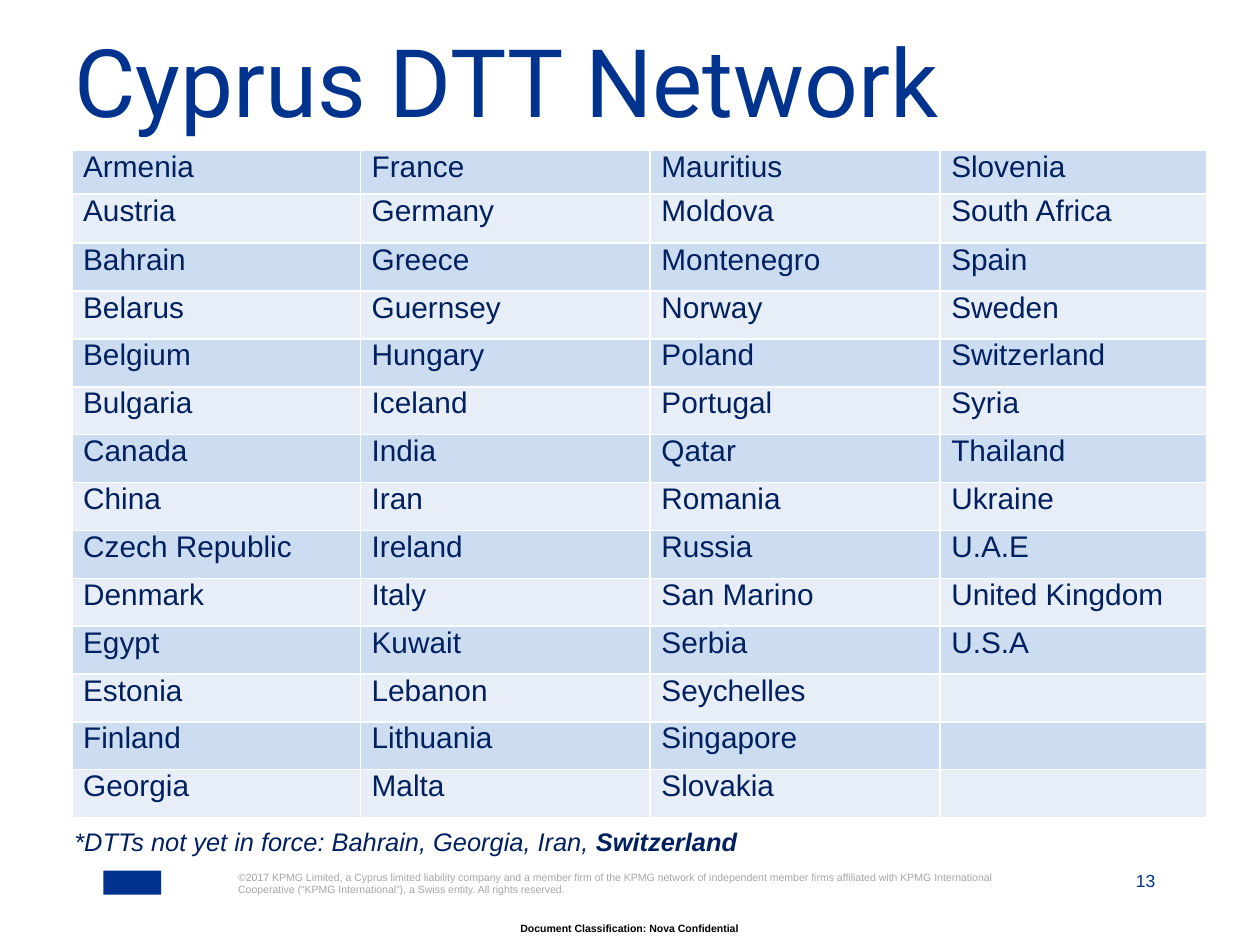
from lxml.etree import SubElement
from pptx import Presentation
from pptx.dml.color import RGBColor
from pptx.enum.shapes import MSO_SHAPE
from pptx.enum.text import MSO_ANCHOR, MSO_AUTO_SIZE, PP_ALIGN
from pptx.oxml.ns import qn
from pptx.util import Inches, Pt

COLORS = {
    "brand": "00338D",
    "navy": "002060",
    "gray": "A6A6A6",
    "black": "000000",
    "border": "FFFFFF",
    "dark_band": "CCDCF1",
    "light_band": "E7EEF8",
}

COUNTRY_COLUMNS = [
    ["Armenia", "Austria", "Bahrain", "Belarus", "Belgium", "Bulgaria", "Canada",
     "China", "Czech Republic", "Denmark", "Egypt", "Estonia", "Finland", "Georgia"],
    ["France", "Germany", "Greece", "Guernsey", "Hungary", "Iceland", "India",
     "Iran", "Ireland", "Italy", "Kuwait", "Lebanon", "Lithuania", "Malta"],
    ["Mauritius", "Moldova", "Montenegro", "Norway", "Poland", "Portugal", "Qatar",
     "Romania", "Russia", "San Marino", "Serbia", "Seychelles", "Singapore", "Slovakia"],
    ["Slovenia", "South Africa", "Spain", "Sweden", "Switzerland", "Syria", "Thailand",
     "Ukraine", "U.A.E", "United Kingdom", "U.S.A", "", "", ""],
]
COLUMN_WIDTHS = [2.29, 2.3, 2.3, 2.12]
ROW_HEIGHTS = [0.35, 0.39] + [0.38] * 12

COPYRIGHT = (
    "©2017 KPMG Limited, a Cyprus limited liability company and a member firm of the "
    "KPMG network of independent member firms affiliated with KPMG International "
    "Cooperative (“KPMG International”), a Swiss entity. All rights reserved."
)


def color(name):
    """Return the named palette colour."""
    return RGBColor.from_string(COLORS[name])


def style_font(font, size, color_name, family="Arial"):
    """Set the family, size and colour of a font."""
    font.name = family
    font.size = Pt(size)
    font.color.rgb = color(color_name)


def prepare_frame(frame, anchor=MSO_ANCHOR.TOP):
    """Give a text frame wrapping, no margins and a fixed size."""
    frame.word_wrap = True
    frame.auto_size = MSO_AUTO_SIZE.NONE
    frame.vertical_anchor = anchor
    frame.margin_left = frame.margin_right = frame.margin_top = frame.margin_bottom = 0


def add_text(page, box, text, size, color_name, align=PP_ALIGN.LEFT, anchor=MSO_ANCHOR.TOP):
    """Add a one-paragraph text box and return the paragraph."""
    frame = page.shapes.add_textbox(*map(Inches, box)).text_frame
    prepare_frame(frame, anchor)
    para = frame.paragraphs[0]
    para.text = text
    para.alignment = align
    style_font(para.font, size, color_name)
    return para


def place_title(page, box):
    """Fill and format the title placeholder."""
    title = page.shapes.title
    title.left, title.top, title.width, title.height = map(Inches, box)
    prepare_frame(title.text_frame)
    title.text_frame.margin_left = Inches(0.03)
    para = title.text_frame.paragraphs[0]
    para.text = "Cyprus DTT Network"
    para.alignment = PP_ALIGN.LEFT
    para.line_spacing = Pt(61.5)
    style_font(para.font, 54, "brand", "Roboto")


def add_borders(cell):
    """Draw a thin line on all four sides of a cell."""
    properties = cell._tc.get_or_add_tcPr()
    for side in ("lnL", "lnR", "lnT", "lnB"):
        line = SubElement(properties, qn(f"a:{side}"), w=str(Pt(1)))
        fill = SubElement(line, qn("a:solidFill"))
        SubElement(fill, qn("a:srgbClr"), val=COLORS["border"])


def format_cell(cell, text, band):
    """Write one country into a cell with its band colour."""
    cell.margin_left = Inches(0.09)
    cell.margin_right = cell.margin_top = cell.margin_bottom = 0
    add_borders(cell)
    cell.fill.solid()
    cell.fill.fore_color.rgb = color(band)
    para = cell.text_frame.paragraphs[0]
    para.text = text
    style_font(para.font, 17, "navy")


def place_country_table(page, box):
    """Add the banded table of treaty countries."""
    table = page.shapes.add_table(
        len(ROW_HEIGHTS), len(COLUMN_WIDTHS), *map(Inches, box)
    ).table
    table.first_row = table.horz_banding = False
    for row, height in zip(table.rows, ROW_HEIGHTS):
        row.height = Inches(height)
    for column_index, countries in enumerate(COUNTRY_COLUMNS):
        table.columns[column_index].width = Inches(COLUMN_WIDTHS[column_index])
        for row_index, country in enumerate(countries):
            band = "light_band" if row_index % 2 else "dark_band"
            format_cell(table.cell(row_index, column_index), country, band)


def place_footnote(page, box):
    """Add the note on treaties not yet in force."""
    para = add_text(page, box, "*DTTs not yet in force: Bahrain, Georgia, Iran, ", 14.5, "navy")
    para.font.italic = True
    span = para.add_run()
    span.text = "Switzerland"
    span.font.bold = True


def place_footer(page, box):
    """Add the emblem block, copyright, page number and classification."""
    left, top, width, height = box
    emblem = page.shapes.add_shape(
        MSO_SHAPE.RECTANGLE, Inches(left), Inches(top), Inches(0.46), Inches(0.19)
    )
    emblem.shadow.inherit = False
    emblem.fill.solid()
    emblem.fill.fore_color.rgb = color("brand")
    emblem.line.fill.background()
    add_text(page, (left + 1.07, top, 6.36, 0.41), COPYRIGHT, 6, "gray")
    add_text(page, (left + width - 1.31, top, 1.31, 0.16), "13", 10, "brand",
             PP_ALIGN.RIGHT, MSO_ANCHOR.BOTTOM)
    classification = add_text(page, (left + 1.2, top + height - 0.1, 5.95, 0.1),
                              "Document Classification: Nova Confidential", 6, "black",
                              PP_ALIGN.CENTER)
    classification.font.bold = True


def main():
    """Build the slide and save the deck."""
    deck = Presentation()
    deck.slide_width, deck.slide_height = Inches(10), Inches(7.5)
    page = deck.slides.add_slide(deck.slide_layouts[5])
    place_title(page, (0.56, 0.23, 9.01, 0.87))
    place_country_table(page, (0.57, 1.19, 9.01, 5.3))
    place_footnote(page, (0.59, 6.56, 5.65, 0.24))
    place_footer(page, (0.82, 6.91, 8.35, 0.51))
    deck.save("out.pptx")


if __name__ == "__main__":
    main()
